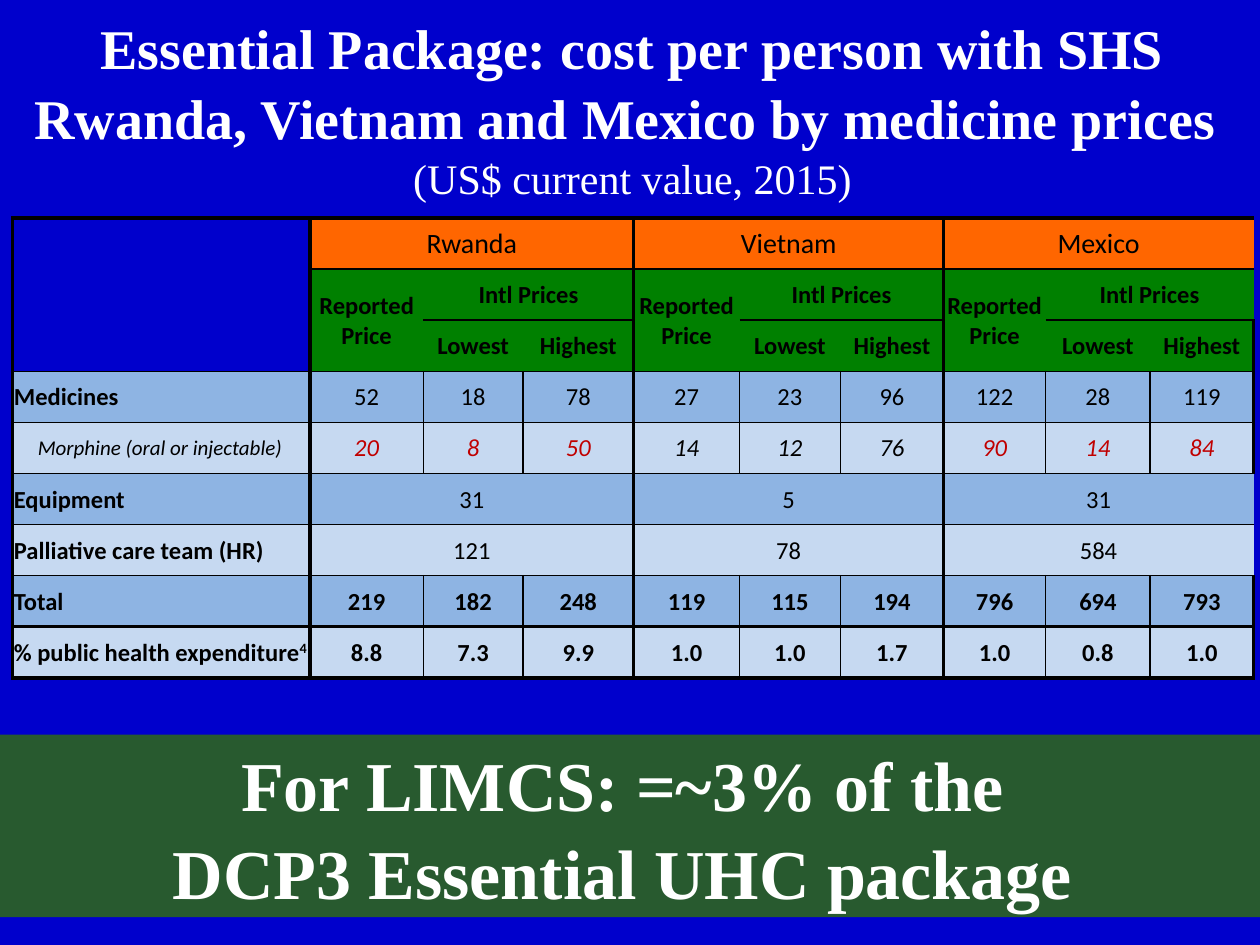
from lxml.etree import SubElement
from pptx import Presentation
from pptx.dml.color import RGBColor
from pptx.enum.shapes import MSO_SHAPE
from pptx.enum.text import MSO_ANCHOR, PP_ALIGN
from pptx.oxml.ns import qn
from pptx.util import Inches, Pt

COLORS = {
    "background": "0000CC", "country": "FF6600", "heading": "008000",
    "dark_row": "8EB4E3", "light_row": "C6D9F1", "banner": "285A2F",
    "black": "000000", "white": "FFFFFF", "red": "C00000",
}
COLUMN_WIDTHS = [2.36, 0.9, 0.79, 0.88, 0.84, 0.8, 0.82, 0.81, 0.83, 0.82]
ROW_COUNT = 9
TABLE_HEIGHT = 3.65
HEADING_ROWS = 3
COUNTRIES = {"Rwanda": 1, "Vietnam": 4, "Mexico": 7}
GROUP_STARTS = {0, 1, 4, 7, 10}
THICK_LEVELS = {0, 8, 9}
COST_ROWS = [
    ("Medicines", ["52", "18", "78", "27", "23", "96", "122", "28", "119"]),
    ("Morphine (oral or injectable)", ["20", "8", "50", "14", "12", "76", "90", "14", "84"]),
    ("Equipment", ["31", "5", "31"]),
    ("Palliative care team (HR)", ["121", "78", "584"]),
    ("Total", ["219", "182", "248", "119", "115", "194", "796", "694", "793"]),
    ("% public health expenditure", ["8.8", "7.3", "9.9", "1.0", "1.0", "1.7", "1.0", "0.8", "1.0"]),
]


def color(name):
    return RGBColor.from_string(COLORS[name])


def add_span(para, text, size, font="Calibri", tone="black", bold=False, italic=False):
    span = para.add_run()
    span.text = text
    span.font.size = Pt(size)
    span.font.name = font
    span.font.color.rgb = color(tone)
    span.font.bold = bold
    span.font.italic = italic
    return span


def draw_border(cell, side, width):
    line = SubElement(cell._tc.get_or_add_tcPr(), qn(f"a:ln{side}"))
    if not width:
        SubElement(line, qn("a:noFill"))
        return
    line.set("w", str(Pt(width)))
    fill = SubElement(line, qn("a:solidFill"))
    SubElement(fill, qn("a:srgbClr")).set("val", COLORS["black"])


def vertical_width(row, edge):
    if edge in GROUP_STARTS:
        return 2.25
    return 0 if row < HEADING_ROWS else 1


def horizontal_width(edge):
    return 2.25 if edge in THICK_LEVELS else 1


def style_region(table, row, column, rows=1, columns=1, fill=None):
    bottom, right = row + rows, column + columns
    for r in range(row, bottom):
        for c in range(column, right):
            cell = table.cell(r, c)
            draw_border(cell, "L", vertical_width(r, c) if c == column else 0)
            draw_border(cell, "R", vertical_width(r, c + 1) if c + 1 == right else 0)
            draw_border(cell, "T", horizontal_width(r) if r == row else 0)
            draw_border(cell, "B", horizontal_width(r + 1) if r + 1 == bottom else 0)
            if fill:
                cell.fill.solid()
                cell.fill.fore_color.rgb = color(fill)
            else:
                cell.fill.background()
    cell = table.cell(row, column)
    if rows * columns > 1:
        cell.merge(table.cell(bottom - 1, right - 1))
    cell.vertical_anchor = MSO_ANCHOR.MIDDLE
    cell.margin_left = cell.margin_right = cell.margin_top = Inches(0.01)
    cell.margin_bottom = 0
    return cell


def add_centred(cell, text, size=14, **style):
    para = cell.text_frame.paragraphs[0]
    para.alignment = PP_ALIGN.CENTER
    add_span(para, text, size, **style)


def fill_headings(table):
    style_region(table, 0, 0, rows=HEADING_ROWS)
    for country, start in COUNTRIES.items():
        add_centred(style_region(table, 0, start, columns=3, fill="country"), country, 16)
        headings = [
            ("Reported Price", 1, start, 2, 1),
            ("Intl Prices", 1, start + 1, 1, 2),
            ("Lowest", 2, start + 1, 1, 1),
            ("Highest", 2, start + 2, 1, 1),
        ]
        for text, *region in headings:
            add_centred(style_region(table, *region, fill="heading"), text, bold=True)


def fill_costs(table):
    for row, (label, values) in enumerate(COST_ROWS, HEADING_ROWS):
        fill = "dark_row" if row % 2 else "light_row"
        morphine = label.startswith("Morphine")
        label_cell = style_region(table, row, 0, fill=fill)
        para = label_cell.text_frame.paragraphs[0]
        add_span(para, label, 12 if morphine else 14, bold=not morphine, italic=morphine)
        if morphine:
            label_cell.margin_left = Inches(0.2)
        if label.startswith("%"):
            mark = add_span(para, "4", 14, bold=True)
            mark.font._element.set("baseline", "30000")
        width = 9 // len(values)
        for index, value in enumerate(values):
            column = 1 + index * width
            cell = style_region(table, row, column, columns=width, fill=fill)
            red = morphine and not 4 <= column < 7
            add_centred(cell, value, tone="red" if red else "black",
                        bold=row >= 7, italic=morphine)


def add_cost_table(page):
    frame = page.shapes.add_table(ROW_COUNT, len(COLUMN_WIDTHS), Inches(0.1), Inches(1.73),
                                  Inches(sum(COLUMN_WIDTHS)), Inches(TABLE_HEIGHT))
    table = frame.table
    table.first_row = table.horz_banding = False
    for column, width in zip(table.columns, COLUMN_WIDTHS):
        column.width = Inches(width)
    for row in table.rows:
        row.height = Inches(TABLE_HEIGHT / ROW_COUNT)
    fill_headings(table)
    fill_costs(table)


def add_serif_para(para):
    para.alignment = PP_ALIGN.CENTER
    para.line_spacing = 1.04
    return para


def add_banner(page):
    box = page.shapes.add_shape(MSO_SHAPE.RECTANGLE, 0, Inches(5.83), Inches(10.02), Inches(1.45))
    box.shadow.inherit = False
    box.fill.solid()
    box.fill.fore_color.rgb = color("banner")
    box.line.fill.background()
    frame = box.text_frame
    frame.word_wrap = True
    frame.vertical_anchor = MSO_ANCHOR.MIDDLE
    paras = [frame.paragraphs[0], frame.add_paragraph()]
    for para, text in zip(paras, ["For LIMCS: =~3% of the ", "DCP3 Essential UHC package "]):
        add_span(add_serif_para(para), text, 40, "Times New Roman", "white", bold=True)


def add_title(page):
    box = page.shapes.add_textbox(Inches(0.02), Inches(0.08), Inches(10), Inches(1.54))
    frame = box.text_frame
    frame.word_wrap = True
    frame.vertical_anchor = MSO_ANCHOR.MIDDLE
    para = add_serif_para(frame.paragraphs[0])
    for text in ["Essential Package: cost per person with SHS",
                 "Rwanda, Vietnam and Mexico by medicine prices "]:
        add_span(para, text, 32, "Times New Roman", "white", bold=True)
        para.add_line_break()
    add_span(para, "(US$ current value, 2015)", 24, "Times New Roman", "white")


def main():
    deck = Presentation()
    deck.slide_width, deck.slide_height = Inches(10), Inches(7.5)
    page = deck.slides.add_slide(deck.slide_layouts[6])
    page.background.fill.solid()
    page.background.fill.fore_color.rgb = color("background")
    add_cost_table(page)
    add_banner(page)
    add_title(page)
    deck.save("out.pptx")


if __name__ == "__main__":
    main()
